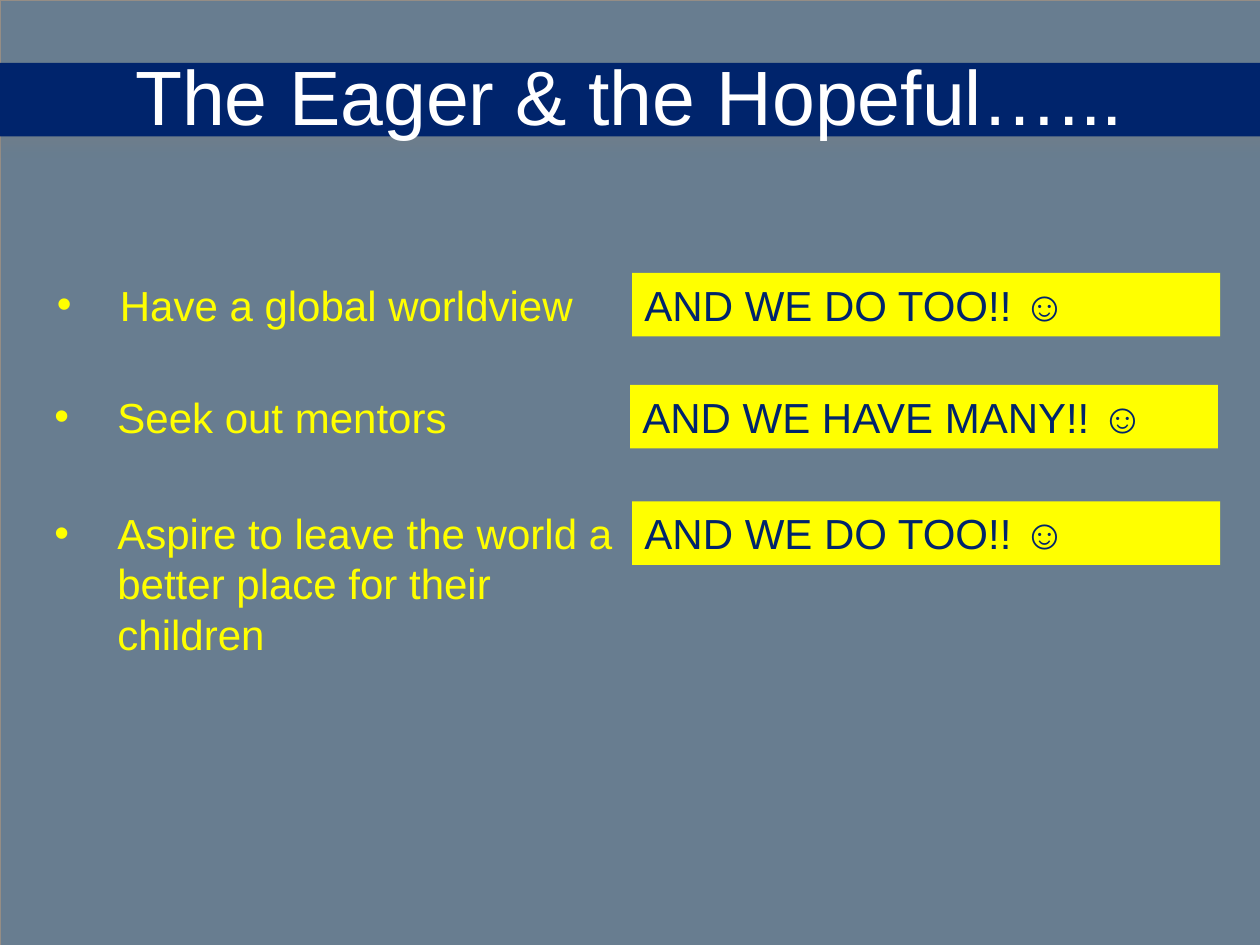
from dataclasses import dataclass

from lxml import etree
from pptx import Presentation
from pptx.dml.color import RGBColor
from pptx.enum import shapes, text
from pptx.oxml import ns
from pptx.util import Pt


@dataclass(frozen=True)
class Theme:
    font: str = "Arial"
    background: str = "687D90"
    navy: str = "00246C"
    yellow: str = "FFFF00"
    white: str = "FFFFFF"
    frame: str = "958D85"
    shadow: str = "808080"
    title_size: int = 44
    body_size: int = 24


theme = Theme()


def add_rectangle(left, top, width, height, fill=None):
    shape = slide.shapes.add_shape(
        shapes.MSO_SHAPE.RECTANGLE, Pt(left), Pt(top), Pt(width), Pt(height))
    shape.shadow.inherit = False
    shape.line.fill.background()
    if fill:
        shape.fill.solid()
        shape.fill.fore_color.rgb = RGBColor.from_string(fill)
    else:
        shape.fill.background()
    return shape


def write_text(shape, wording, size, color, alignment=text.PP_ALIGN.LEFT):
    frame = shape.text_frame
    frame.text = wording
    frame.word_wrap = True
    frame.auto_size = text.MSO_AUTO_SIZE.SHAPE_TO_FIT_TEXT
    frame.vertical_anchor = text.MSO_ANCHOR.TOP
    paragraph = frame.paragraphs[0]
    paragraph.alignment = alignment
    font = paragraph.runs[0].font
    font.name = theme.font
    font.size = Pt(size)
    font.color.rgb = RGBColor.from_string(color)
    return paragraph


presentation = Presentation()
presentation.slide_width = Pt(720)
presentation.slide_height = Pt(540)
slide = presentation.slides.add_slide(presentation.slide_layouts[6])
slide.background.fill.solid()
slide.background.fill.fore_color.rgb = RGBColor.from_string(theme.background)

border = add_rectangle(0, 0, 720, 540)
border.line.color.rgb = RGBColor.from_string(theme.frame)
border.line.width = Pt(0.13)

band = add_rectangle(-6, 36, 732, 42, theme.navy)
effects = band._element.spPr.find(ns.qn("a:effectLst"))
shadow = etree.SubElement(
    effects, ns.qn("a:outerShdw"), blurRad=str(Pt(7)), dist=str(Pt(4.8)),
    dir="5400000", algn="ctr", rotWithShape="0")
shadow_color = etree.SubElement(shadow, ns.qn("a:srgbClr"), val=theme.shadow)
etree.SubElement(shadow_color, ns.qn("a:alpha"), val="25000")

title = slide.shapes.add_textbox(Pt(0), Pt(24), Pt(720), Pt(60.5))
write_text(title, "The Eager & the Hopeful…...", theme.title_size, theme.white,
           text.PP_ALIGN.CENTER)

column_width, row_height, indent = 336, 36.35, 36
rows = [
    (25.4, 156, row_height, "Have a global worldview", "AND WE DO TOO!! ☺"),
    (24, 220, row_height, "Seek out mentors", "AND WE HAVE MANY!! ☺"),
    (24, 286.5, 94.5, "Aspire to leave the world a better place for their children",
     "AND WE DO TOO!! ☺"),
]
reply_lefts = [361.2, 360, 361.2]

for (left, top, height, trait, reply), reply_left in zip(rows, reply_lefts):
    trait_box = slide.shapes.add_textbox(Pt(left), Pt(top), Pt(column_width), Pt(height))
    paragraph = write_text(trait_box, trait, theme.body_size, theme.yellow)
    properties = paragraph._p.get_or_add_pPr()
    properties.set("marL", str(Pt(indent)))
    properties.set("indent", str(Pt(-indent)))
    etree.SubElement(properties, ns.qn("a:buFont"), typeface=theme.font)
    etree.SubElement(properties, ns.qn("a:buChar"), char="•")

    reply_box = add_rectangle(reply_left, top, column_width, row_height, theme.yellow)
    write_text(reply_box, reply, theme.body_size, theme.navy)

presentation.save("out.pptx")
